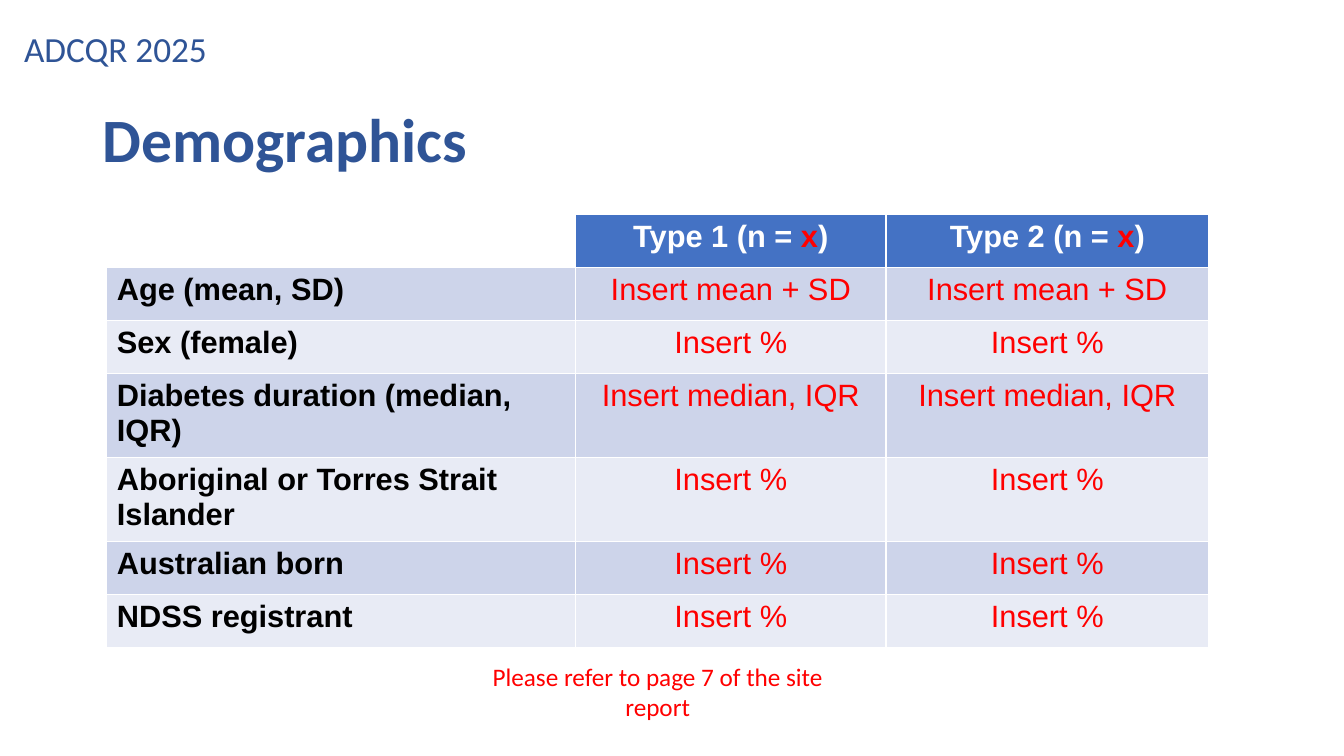
"""Build the Demographics slide of the ADCQR 2025 deck."""
from pptx import Presentation
from pptx.dml.color import RGBColor
from pptx.enum.text import MSO_ANCHOR, PP_ALIGN
from pptx.util import Pt

BLUE, RED, WHITE, BLACK = "2F5496", "FF0000", "FFFFFF", "000000"
HEADER_FILL = "4472C4"
BAND_FILLS = ["CDD4EA", "E8EBF5"]

LABELS = [
    {"text": "ADCQR 2025", "box": (10.08, 19.44, 145.44, 33.84), "size": 25.2,
     "color": BLUE, "anchor": MSO_ANCHOR.MIDDLE, "spacing": 0.9},
    {"text": "Demographics", "box": (66.24, 68.4, 828, 60.48), "size": 44,
     "color": BLUE, "bold": True},
    {"text": "Please refer to page 7 of the site report",
     "box": (326.88, 465.12, 285.84, 74.88), "size": 18, "color": RED,
     "align": PP_ALIGN.CENTER, "inset": 7.2},
]

GROUPS = ["Type 1", "Type 2"]
MEASURES = [
    ("Age (mean, SD)", "Insert mean + SD"),
    ("Sex (female)", "Insert %"),
    ("Diabetes duration (median, IQR)", "Insert median, IQR"),
    ("Aboriginal or Torres Strait Islander", "Insert %"),
    ("Australian born", "Insert %"),
    ("NDSS registrant", "Insert %"),
]
TABLE_LEFT, TABLE_TOP = 76.32, 153.36
COLUMN_WIDTHS = [334.8, 221.76, 230.4]
ROW_HEIGHT = 37.85


def rgb(color):
    return RGBColor.from_string(color)


def style(para, name, size, bold, align):
    para.font.name, para.font.size, para.font.bold = name, Pt(size), bold
    para.alignment = align


def write(para, spans):
    for text, color in spans:
        span = para.add_run()
        span.text = text
        span.font.color.rgb = rgb(color)


def add_label(page, text, box, size, color, bold=False, align=PP_ALIGN.LEFT,
              anchor=MSO_ANCHOR.TOP, spacing=1.0, inset=3.6):
    frame = page.shapes.add_textbox(*map(Pt, box)).text_frame
    frame.word_wrap = True
    frame.vertical_anchor = anchor
    frame.margin_top = frame.margin_bottom = Pt(inset)
    para = frame.paragraphs[0]
    style(para, "Calibri", size, bold, align)
    para.line_spacing = spacing
    write(para, [(text, color)])


def fill_cell(cell, fill, spans, bold, align):
    cell.fill.solid()
    cell.fill.fore_color.rgb = rgb(fill)
    para = cell.text_frame.paragraphs[0]
    style(para, "Arial", 22, bold, align)
    write(para, spans)


def add_demographics(page):
    row_count = len(MEASURES) + 1
    table = page.shapes.add_table(
        row_count, len(COLUMN_WIDTHS), Pt(TABLE_LEFT), Pt(TABLE_TOP),
        Pt(sum(COLUMN_WIDTHS)), Pt(ROW_HEIGHT * row_count)).table
    for column, width in zip(table.columns, COLUMN_WIDTHS):
        column.width = Pt(width)
    for row in table.rows:
        row.height = Pt(ROW_HEIGHT)
    fill_cell(table.cell(0, 0), WHITE, [], True, PP_ALIGN.LEFT)
    for col, group in enumerate(GROUPS, 1):
        spans = [(f"{group} (n = ", WHITE), ("x", RED), (")", WHITE)]
        fill_cell(table.cell(0, col), HEADER_FILL, spans, True, PP_ALIGN.CENTER)
    for row, (measure, value) in enumerate(MEASURES, 1):
        fill = BAND_FILLS[(row - 1) % 2]
        fill_cell(table.cell(row, 0), fill, [(measure, BLACK)], True, PP_ALIGN.LEFT)
        for col in range(1, len(COLUMN_WIDTHS)):
            fill_cell(table.cell(row, col), fill, [(value, RED)], False, PP_ALIGN.CENTER)


def main():
    deck = Presentation()
    deck.slide_width, deck.slide_height = Pt(960), Pt(540)
    page = deck.slides.add_slide(deck.slide_layouts[6])
    for label in LABELS:
        add_label(page, **label)
    add_demographics(page)
    deck.save("out.pptx")


if __name__ == "__main__":
    main()
